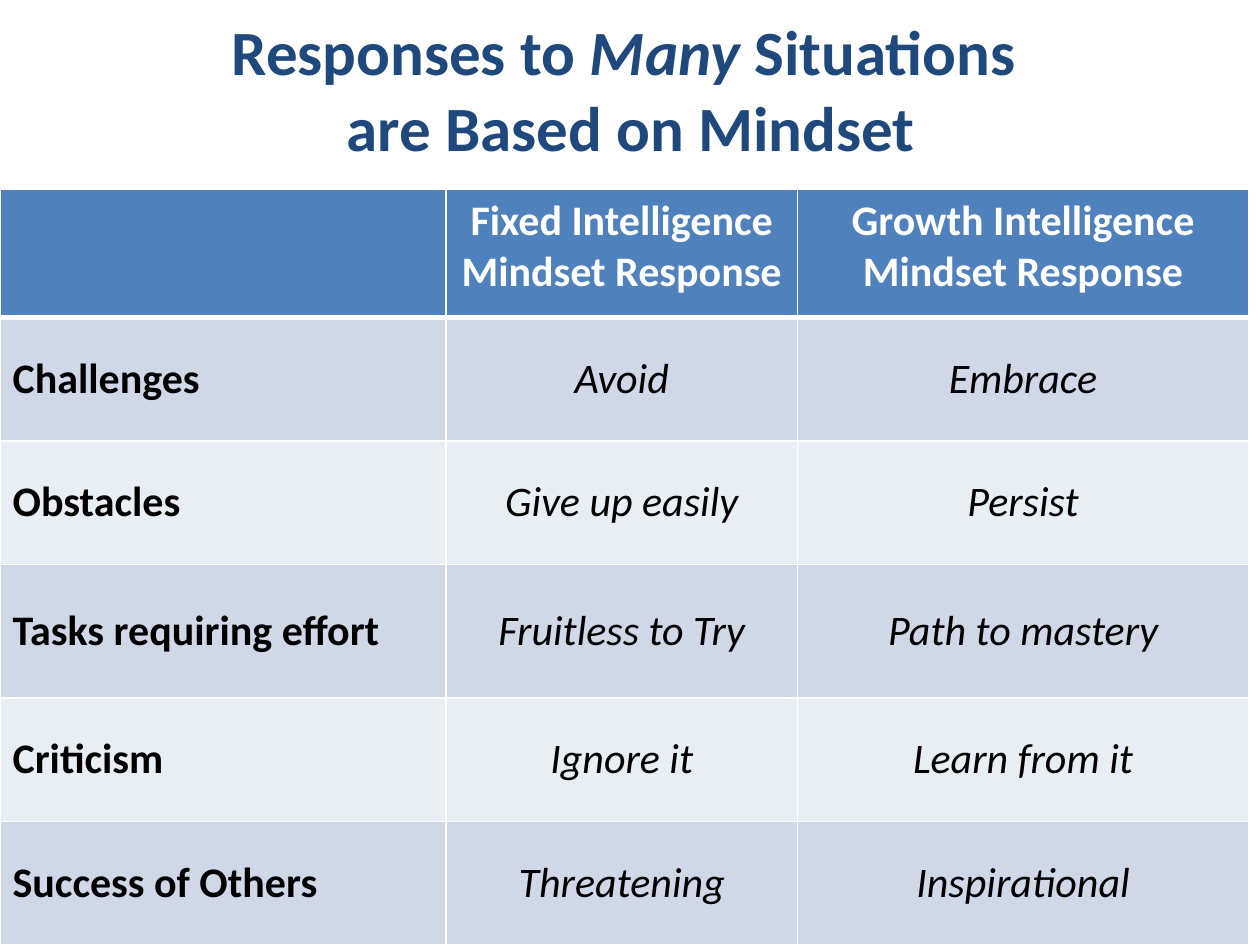
from dataclasses import dataclass

from lxml import etree
from pptx import Presentation
from pptx.dml.color import RGBColor
from pptx.enum.text import MSO_ANCHOR, MSO_AUTO_SIZE, PP_ALIGN
from pptx.oxml.ns import qn
from pptx.util import Inches, Pt

LEFT, CENTER = PP_ALIGN.LEFT, PP_ALIGN.CENTER
TOP, MIDDLE = MSO_ANCHOR.TOP, MSO_ANCHOR.MIDDLE
NO_AUTOFIT = MSO_AUTO_SIZE.NONE

NAVY = RGBColor(0x1F, 0x49, 0x7D)
BLUE = RGBColor(0x4F, 0x81, 0xBD)
BAND_DARK = RGBColor(0xD0, 0xD8, 0xE8)
BAND_LIGHT = RGBColor(0xE9, 0xED, 0xF4)
WHITE = RGBColor(0xFF, 0xFF, 0xFF)
BLACK = RGBColor(0x00, 0x00, 0x00)
FONT = "Calibri"
COLUMN_WIDTHS = (3.54, 2.79, 3.58)


@dataclass(frozen=True)
class Response:
    situation: str
    fixed: str
    growth: str
    height: float = 0.98


@dataclass(frozen=True)
class CellStyle:
    fill: RGBColor
    color: RGBColor
    bold: bool
    align: PP_ALIGN
    anchor: MSO_ANCHOR
    top_border: int = 1
    bottom_border: int = 1


HEADER = Response(
    "",
    "Fixed Intelligence Mindset Response",
    "Growth Intelligence Mindset Response",
    1.02,
)
RESPONSES = (
    Response("Challenges", "Avoid", "Embrace"),
    Response("Obstacles", "Give up easily", "Persist"),
    Response("Tasks requiring effort", "Fruitless to Try", "Path to mastery", 1.06),
    Response("Criticism", "Ignore it", "Learn from it"),
    Response("Success of Others", "Threatening", "Inspirational"),
)


def add_title(slide) -> None:
    title = slide.shapes.title
    title.left, title.top = Inches(0), Inches(0.19)
    title.width, title.height = Inches(10.01), Inches(1.56)
    frame = title.text_frame
    frame.word_wrap = True
    frame.auto_size = NO_AUTOFIT
    frame.vertical_anchor = MIDDLE
    frame.margin_bottom = Inches(0.59)
    heading = frame.paragraphs[0]
    heading.alignment = CENTER
    heading.font.name = FONT
    heading.font.size = Pt(36)
    heading.font.bold = True
    heading.font.color.rgb = NAVY
    heading.add_run().text = "Responses to "
    emphasis = heading.add_run()
    emphasis.text = "Many"
    emphasis.font.italic = True
    heading.add_run().text = " Situations "
    heading.add_line_break()
    heading.add_run().text = "are Based on Mindset"


def set_borders(cell, top: int, bottom: int) -> None:
    properties = cell._tc.get_or_add_tcPr()
    for side, width in (("L", 1), ("R", 1), ("T", top), ("B", bottom)):
        line = etree.SubElement(properties, qn(f"a:ln{side}"), w=str(Pt(width)))
        fill = etree.SubElement(line, qn("a:solidFill"))
        etree.SubElement(fill, qn("a:srgbClr"), val=str(WHITE))


def fill_cell(cell, text: str, style: CellStyle) -> None:
    set_borders(cell, style.top_border, style.bottom_border)
    cell.fill.solid()
    cell.fill.fore_color.rgb = style.fill
    cell.vertical_anchor = style.anchor
    cell.text = text
    entry = cell.text_frame.paragraphs[0]
    entry.alignment = style.align
    entry.font.name = FONT
    entry.font.size = Pt(24)
    entry.font.bold = style.bold
    entry.font.italic = not style.bold
    entry.font.color.rgb = style.color


def style_for(row: int, column: int) -> CellStyle:
    if row == 0:
        return CellStyle(BLUE, WHITE, True, CENTER, TOP, bottom_border=3)
    band = BAND_DARK if row % 2 else BAND_LIGHT
    is_situation = column == 0
    align = LEFT if is_situation else CENTER
    return CellStyle(band, BLACK, is_situation, align, MIDDLE,
                     top_border=3 if row == 1 else 1)


def add_response_table(slide) -> None:
    rows = (HEADER, *RESPONSES)
    table = slide.shapes.add_table(
        len(rows), len(COLUMN_WIDTHS), Inches(0), Inches(1.5),
        Inches(sum(COLUMN_WIDTHS)), Inches(sum(row.height for row in rows)),
    ).table
    for column, width in zip(table.columns, COLUMN_WIDTHS):
        column.width = Inches(width)
    for r, response in enumerate(rows):
        table.rows[r].height = Inches(response.height)
        texts = (response.situation, response.fixed, response.growth)
        for c, text in enumerate(texts):
            fill_cell(table.cell(r, c), text, style_for(r, c))


def main() -> None:
    presentation = Presentation()
    presentation.slide_width = Inches(10)
    presentation.slide_height = Inches(7.5)
    slide = presentation.slides.add_slide(presentation.slide_layouts[5])
    add_title(slide)
    add_response_table(slide)
    presentation.save("out.pptx")


if __name__ == "__main__":
    main()
